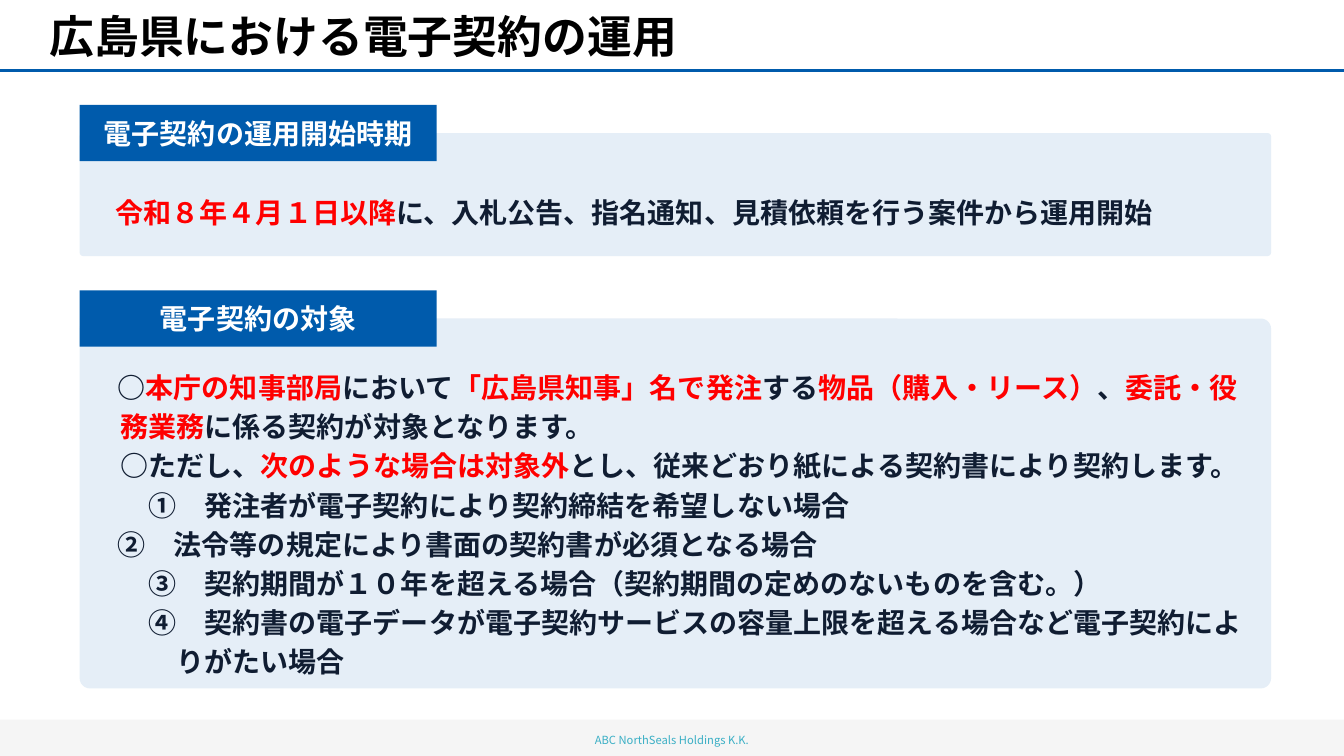
from dataclasses import dataclass

from lxml import etree
from pptx import Presentation
from pptx.dml.color import RGBColor
from pptx.enum.lang import MSO_LANGUAGE_ID
from pptx.enum.shapes import MSO_CONNECTOR, MSO_SHAPE
from pptx.enum.text import MSO_ANCHOR, PP_ALIGN
from pptx.oxml.ns import qn
from pptx.util import Inches, Pt

RECT, ROUNDED = MSO_SHAPE.RECTANGLE, MSO_SHAPE.ROUNDED_RECTANGLE
STRAIGHT = MSO_CONNECTOR.STRAIGHT
LEFT, CENTER = PP_ALIGN.LEFT, PP_ALIGN.CENTER
TOP, MIDDLE = MSO_ANCHOR.TOP, MSO_ANCHOR.MIDDLE
JAPANESE = MSO_LANGUAGE_ID.JAPANESE
SLIDE_W, SLIDE_H = Inches(13.333), Inches(7.5)


@dataclass(frozen=True)
class Theme:
    font: str = "Noto Sans CJK JP"
    title: str = "000000"
    body: str = "101D32"
    alert: str = "FF0000"
    accent: str = "005BAC"
    on_accent: str = "FFFFFF"
    panel: str = "E5EEF7"
    footer_band: str = "F5F5F5"
    footer: str = "3AAFC5"
    title_pt: float = 32
    body_pt: float = 20
    footer_pt: float = 8
    rule_pt: float = 2.25
    leading_pt: float = 28


THEME = Theme()


@dataclass(frozen=True)
class Span:
    text: str
    color: str = THEME.body
    size: float = THEME.body_pt
    bold: bool = True


@dataclass(frozen=True)
class Line:
    spans: tuple[Span, ...]
    indent: float = 0
    align: PP_ALIGN = LEFT
    spacing: float | Pt | None = None


@dataclass(frozen=True)
class Area:
    """A rectangle in percent of the slide's width and height."""
    left: float
    top: float
    width: float
    height: float

    def emu(self) -> tuple[int, int, int, int]:
        return (across(self.left), down(self.top),
                across(self.width), down(self.height))


@dataclass(frozen=True)
class Section:
    heading: str
    top: float
    height: float
    lines: tuple[Line, ...]


def across(percent: float) -> int:
    return round(SLIDE_W * percent / 100)


def down(percent: float) -> int:
    return round(SLIDE_H * percent / 100)


def alert(text: str) -> Span:
    return Span(text, THEME.alert)


def clause(*spans: Span, indent: float) -> Line:
    """A body line with fixed leading; the indent is in points."""
    return Line(spans, indent, spacing=Pt(THEME.leading_pt))


PANEL_LEFT, PANEL_WIDTH = 5.93, 88.65
HEADING_WIDTH, HEADING_HEIGHT = 26.56, 7.47
HEADING_CLEARANCE = 0.41
ONE_EM, TWO_EM, THREE_EM = (THEME.body_pt * n for n in (1, 2, 3))
NARROW = 18

SECTIONS = (
    Section("電子契約の運用開始時期", 17.6, 16.27, (
        Line((alert("令和８年４月１日以降"),
              Span("に、入札公告、指名通知、見積依頼を行う案件から運用開始")), NARROW),
    )),
    Section("電子契約の対象", 42.13, 48.93, (
        clause(Span("○"), alert("本庁の知事部局"), Span("において"),
               alert("「広島県知事」名で発注"), Span("する"),
               alert("物品（購入・リース）"), Span("、"), alert("委託・役"),
               indent=NARROW),
        clause(alert("務業務"), Span("に係る契約が対象となります。"), indent=ONE_EM),
        clause(Span("○ただし、"), alert("次のような場合は対象外"),
               Span("とし、従来どおり紙による契約書により契約します。"), indent=ONE_EM),
        clause(Span("①　発注者が電子契約により契約締結を希望しない場合"), indent=TWO_EM),
        clause(Span("②　法令等の規定により書面の契約書が必須となる場合"), indent=NARROW),
        clause(Span("③　契約期間が１０年を超える場合（契約期間の定めのないものを含む。）"),
               indent=TWO_EM),
        clause(Span("④　契約書の電子データが電子契約サービスの容量上限を超える場合など電子契約によ"),
               indent=TWO_EM),
        clause(Span("りがたい場合"), indent=THREE_EM),
    )),
)


def write(frame, lines: tuple[Line, ...], anchor: MSO_ANCHOR = MIDDLE,
          left: float = 0.1, top: float = 0.05) -> None:
    """Fill a text frame; left and top are insets in inches."""
    frame.word_wrap = True
    frame.vertical_anchor = anchor
    frame.margin_left, frame.margin_right = Inches(left), Inches(0.1)
    frame.margin_top, frame.margin_bottom = Inches(top), Inches(0.05)
    for index, line in enumerate(lines):
        paragraph = frame.add_paragraph() if index else frame.paragraphs[0]
        paragraph.alignment = line.align
        if line.spacing is not None:
            paragraph.line_spacing = line.spacing
        properties = paragraph._p.get_or_add_pPr()
        properties.set("marL", str(Pt(line.indent)))
        properties.set("indent", "0")
        for span in line.spans:
            run = paragraph.add_run()
            run.text = span.text
            font = run.font
            font.size, font.bold = Pt(span.size), span.bold
            font.color.rgb = RGBColor.from_string(span.color)
            font.name, font.language_id = THEME.font, JAPANESE
            east_asian = etree.SubElement(run._r.get_or_add_rPr(), qn("a:ea"))
            east_asian.set("typeface", THEME.font)


def add_block(slide, kind: MSO_SHAPE, area: Area, color: str):
    block = slide.shapes.add_shape(kind, *area.emu())
    block.shadow.inherit = False
    block.fill.solid()
    block.fill.fore_color.rgb = RGBColor.from_string(color)
    block.line.fill.background()
    return block


def add_section(slide, section: Section) -> None:
    """Draw a panel with its heading straddling the top edge."""
    panel = add_block(slide, ROUNDED, Area(PANEL_LEFT, section.top, PANEL_WIDTH,
                                           section.height), THEME.panel)
    panel.adjustments[0] = 0.028
    write(panel.text_frame, section.lines, top=HEADING_CLEARANCE)
    heading = add_block(slide, RECT,
                        Area(PANEL_LEFT, section.top - HEADING_HEIGHT / 2,
                             HEADING_WIDTH, HEADING_HEIGHT), THEME.accent)
    write(heading.text_frame,
          (Line((Span(section.heading, THEME.on_accent),), align=CENTER),))


def add_footer(slide) -> None:
    add_block(slide, RECT, Area(0, 95.2, 100, 4.8), THEME.footer_band)
    company = slide.shapes.add_textbox(*Area(40.06, 96, 19.88, 3.47).emu())
    name = Span("ABC NorthSeals Holdings K.K.", THEME.footer, THEME.footer_pt, False)
    write(company.text_frame, (Line((name,), align=CENTER, spacing=1.2),), TOP)


def add_title(slide) -> None:
    rule = slide.shapes.add_connector(STRAIGHT, 0, down(9.33), SLIDE_W, down(9.33))
    rule.line.color.rgb = RGBColor.from_string(THEME.accent)
    rule.line.width = Pt(THEME.rule_pt)
    etree.SubElement(rule._element.spPr, qn("a:effectLst"))
    title = slide.shapes.add_textbox(*Area(3.08, 1.2, 84.07, 9.07).emu())
    words = Span("広島県における電子契約の運用", THEME.title, THEME.title_pt)
    write(title.text_frame, (Line((words,)),), TOP, left=0.08, top=0)


def main() -> None:
    deck = Presentation()
    deck.slide_width, deck.slide_height = SLIDE_W, SLIDE_H
    slide = deck.slides.add_slide(deck.slide_layouts[6])
    add_footer(slide)
    add_title(slide)
    for section in SECTIONS:
        add_section(slide, section)
    deck.save("out.pptx")


if __name__ == "__main__":
    main()
